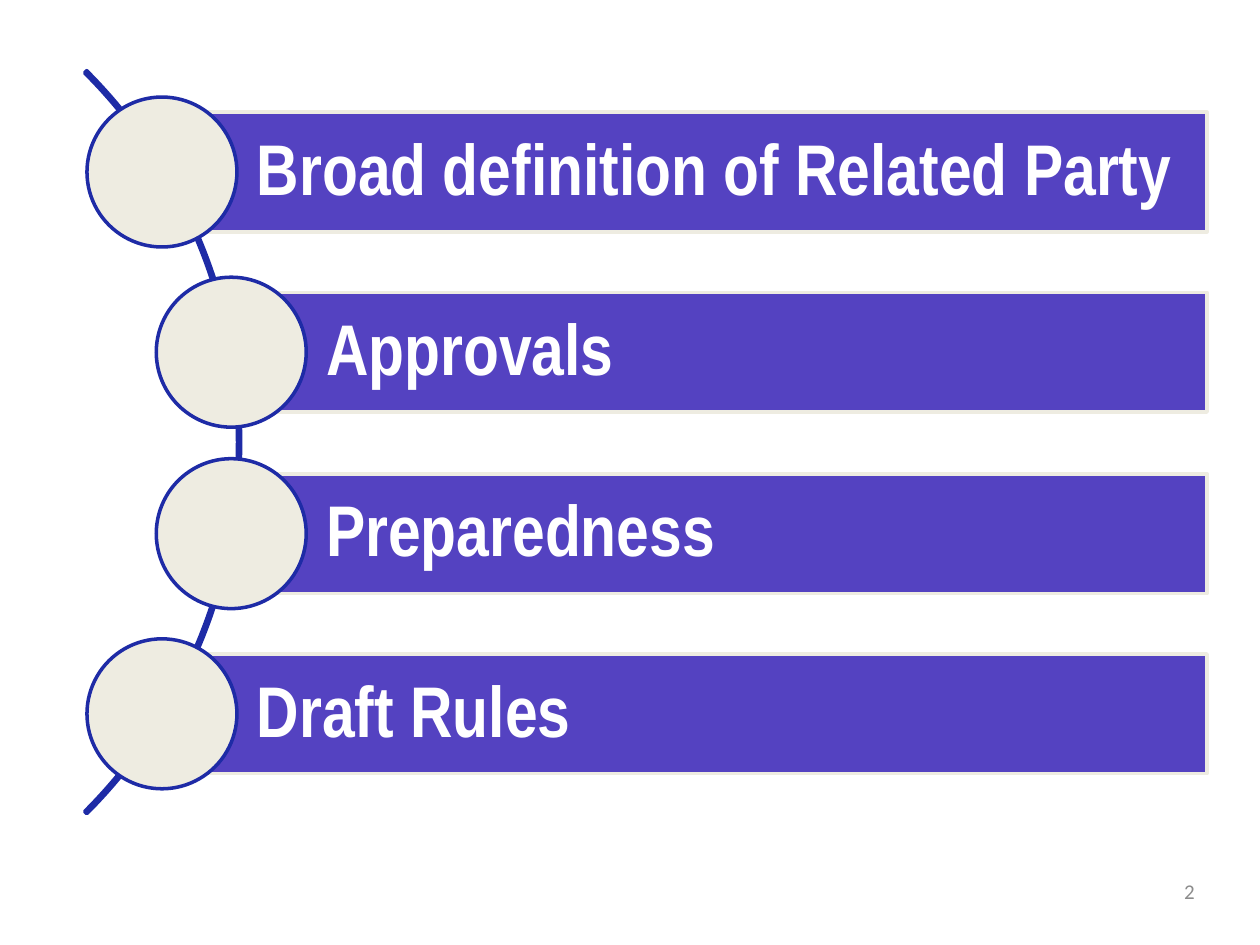
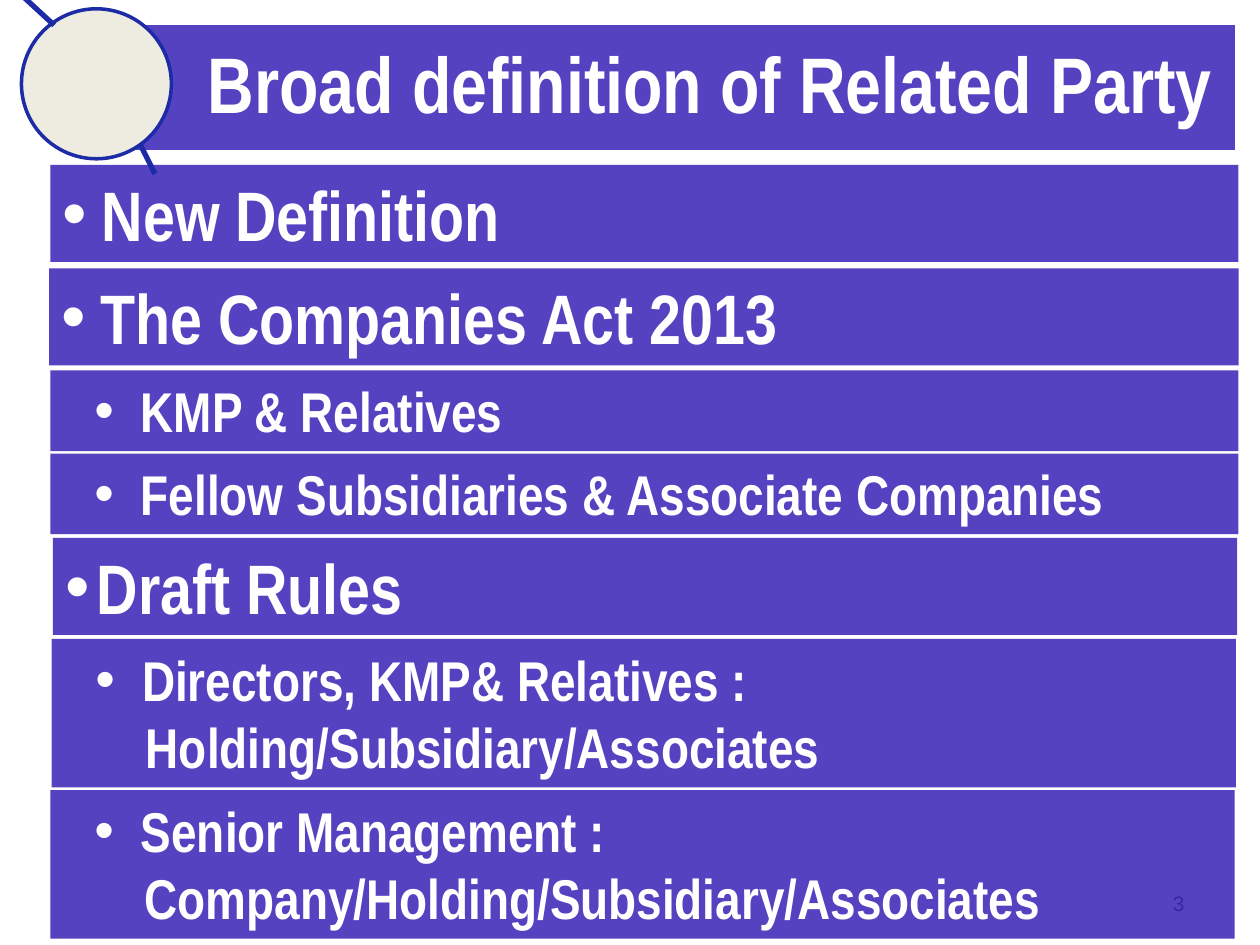
from lxml import etree
from pptx import Presentation
from pptx import util as u
from pptx.dml.color import RGBColor
from pptx.enum import shapes, text
from pptx.oxml.ns import qn

PX = 9144
HUES = {"bar": "1B03AD", "rim": "1E2BA6", "cream": "EEECE1",
        "white": "FFFFFF", "grey": "8C8C8C"}
KIND = shapes.MSO_SHAPE
MID = text.MSO_ANCHOR.MIDDLE
BOLD = {"name": "Arial Narrow", "bold": True}
HEAD = {"word_wrap": True, "vertical_anchor": MID, "margin_left": 76 * PX,
        "margin_right": 11 * PX, "margin_top": 11 * PX, "margin_bottom": 11 * PX}
BODY = {"word_wrap": True, "vertical_anchor": text.MSO_ANCHOR.TOP}
NOTE = {"word_wrap": True, "vertical_anchor": MID}
DOT = 119

TOPICS = [("Broad definition of Related Party", 0), ("Approvals", 55),
          ("Preparedness", 55), ("Draft Rules", 0)]
ROWS = [
    ((40, 131, 943, 77), 40, (31, -31), ["New Definition"]),
    ((39, 213, 944, 77), 40, (31, -31), ["The Companies Act 2013"]),
    ((40, 294, 943, 64), 32, (62, -37), ["KMP & Relatives"]),
    ((40, 360, 943, 64), 32, (62, -37), ["Fellow Subsidiaries & Associate Companies"]),
    ((42, 427, 940, 77), 40, (25, -25), ["Draft Rules"]),
    ((41, 507, 940, 118), 32, (62, -37),
     ["Directors, KMP& Relatives :", "Holding/Subsidiary/Associates"]),
    ((40, 627, 940, 118), 32, (62, -37),
     ["Senior Management :", "Company/Holding/Subsidiary/Associates"]),
]


def put(item, form):
    for key, val in form.items():
        setattr(item, key, val)


class Deck:
    """Hold the style and the current slide, and draw each kind of element."""

    def __init__(self):
        self.pres = Presentation()
        put(self.pres, {"slide_width": 1000 * PX, "slide_height": 750 * PX})

    def page(self):
        self.slide = self.pres.slides.add_slide(self.pres.slide_layouts[6])
        self.all = self.slide.shapes

    def shape(self, kind, box, fill, rim=None):
        item = self.all.add_shape(kind, *(n * PX for n in box))
        item.shadow.inherit = False
        item.fill.solid()
        item.fill.fore_color.rgb = RGBColor.from_string(HUES[fill])
        self.edge(item.line, rim, 2)
        return item

    def edge(self, line, hue, size):
        if hue is None:
            line.fill.background()
        else:
            line.color.rgb = RGBColor.from_string(HUES[hue])
            line.width = u.Pt(size)

    def bar(self, box, rim=None):
        item = self.shape(KIND.RECTANGLE, box, "bar", rim)
        tint = item._element.spPr.find(qn("a:solidFill"))[0]
        etree.SubElement(tint, qn("a:alpha"), val="75000")
        return item

    def disc(self, left, top):
        self.shape(KIND.OVAL, (left, top, DOT, DOT), "cream", "rim")

    def arc(self, box):
        item = self.shape(KIND.BLOCK_ARC, box, "rim", "rim")
        for i, val in enumerate((189, 27, 0.003)):
            item.adjustments[i] = val

    def label(self, para, words, size, hue="white", font=BOLD, align=text.PP_ALIGN.LEFT):
        para.alignment = align
        run = para.add_run()
        run.text = words
        put(run.font, {"size": u.Pt(size), **font})
        run.font.color.rgb = RGBColor.from_string(HUES[hue])

    def head(self, box, words, size, rim=None):
        frame = self.bar(box, rim).text_frame
        put(frame, HEAD)
        para = frame.paragraphs[0]
        para.line_spacing = 0.9
        self.label(para, words, size)

    def row(self, box, size, dent, lines):
        frame = self.bar(box).text_frame
        put(frame, BODY)
        for i, words in enumerate(lines):
            para = frame.add_paragraph() if i else frame.paragraphs[0]
            self.label(para, words, size)
            left, hang = (dent[0] + 3, 0) if i else dent
            prop = para._p.get_or_add_pPr()
            prop.set("marL", str(left * PX))
            prop.set("indent", str(hang * PX))
            if not i:
                etree.SubElement(prop, qn("a:buFont"), typeface="Arial")
                etree.SubElement(prop, qn("a:buChar"), char="•")

    def line(self, *ends):
        item = self.all.add_connector(shapes.MSO_CONNECTOR.STRAIGHT,
                                      *(n * PX for n in ends))
        self.edge(item.line, "rim", 3)
        etree.SubElement(item._element.spPr, qn("a:effectLst"))

    def count(self, left, top, words, font):
        frame = self.all.add_textbox(left * PX, top * PX, 233 * PX, 40 * PX).text_frame
        put(frame, NOTE)
        self.label(frame.paragraphs[0], words, 12, "grey", {"name": font},
                   text.PP_ALIGN.RIGHT)


def topics(deck):
    deck.page()
    deck.arc((-643, -66, 834, 834))
    for i, (words, shift) in enumerate(TOPICS):
        top = 89 + round(i * 430 / 3)
        left = 128 + shift
        deck.head((left, top, 958 - left, 95), words, 41, "cream")
        deck.disc(left - 59, top - 12)
    deck.count(725, 687, "2", "Calibri")


def scope(deck):
    deck.page()
    deck.count(717, 697, "3", "Arial")
    deck.head((89, 20, 891, 99), TOPICS[0][0], 45)
    deck.disc(17, 7)
    for row in ROWS:
        deck.row(*row)
    deck.line(17, -4, 43, 20)
    deck.line(111, 114, 123, 138)


def main():
    deck = Deck()
    topics(deck)
    scope(deck)
    deck.pres.save("out.pptx")


if __name__ == "__main__":
    main()
